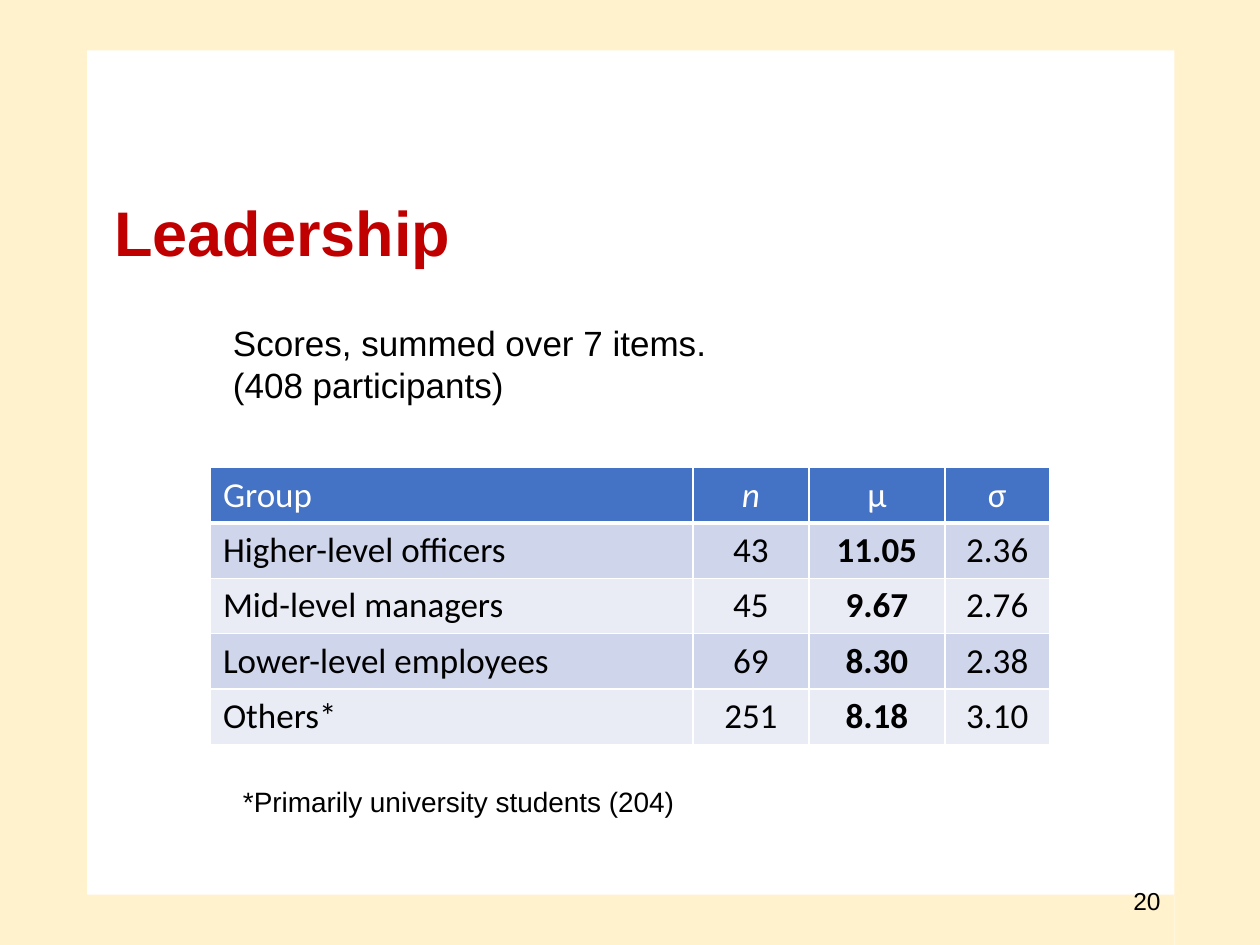
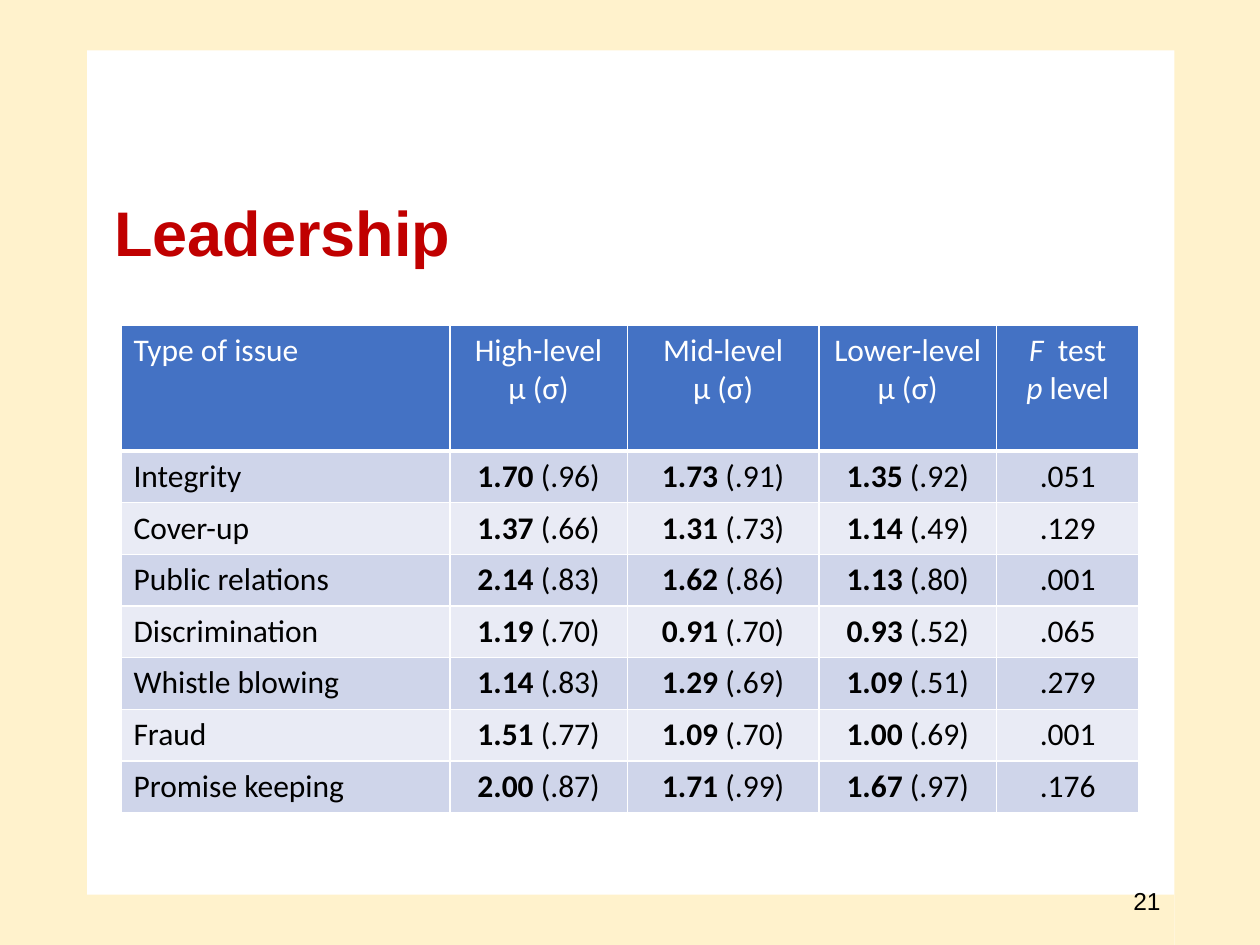
from pptx import Presentation
from pptx.dml.color import RGBColor
from pptx.enum.shapes import MSO_SHAPE as Shape
from pptx.enum.text import MSO_ANCHOR as Anchor, PP_ALIGN as Align
from pptx.oxml import parse_xml
from pptx.oxml.ns import nsdecls
from pptx.util import Inches, Pt

CREAM = RGBColor(0xFF, 0xF2, 0xCC)
RED = RGBColor(0xC0, 0x00, 0x00)
BLACK = RGBColor(0x00, 0x00, 0x00)
WHITE = RGBColor(0xFF, 0xFF, 0xFF)
BLUE = RGBColor(0x44, 0x72, 0xC4)
DARK = RGBColor(0xCF, 0xD5, 0xEA)
LIGHT = RGBColor(0xE9, 0xEB, 0xF5)

BANDS = [
    (0, 0, 0.69, 7.5),
    (9.32, 0, 0.69, 7.5),
    (0.69, 0, 8.67, 0.4),
    (0.65, 7.1, 8.67, 0.4),
]

GROUPS = [
    ["Group", "n|", "μ", "σ"],
    ["Higher-level officers", "43", "11.05|", "2.36"],
    ["Mid-level managers", "45", "9.67|", "2.76"],
    ["Lower-level employees", "69", "8.30|", "2.38"],
    ["Others*", "251", "8.18|", "3.10"],
]

LEVELS = ["High-level", "Mid-level", "Lower-level"]
ISSUES = [
    ("Integrity", "1.70 |(.96)", "1.73 |(.91)", "1.35 |(.92)", ".051"),
    ("Cover-up", "1.37 |(.66)", "1.31 |(.73)", "1.14 |(.49)", ".129"),
    ("Public relations", "2.14 |(.83)", "1.62 |(.86)", "1.13 |(.80)", ".001"),
    ("Discrimination", "1.19 |(.70)", "0.91 |(.70)", "0.93 |(.52)", ".065"),
    ("Whistle blowing", "1.14 |(.83)", "1.29 |(.69)", "1.09 |(.51)", ".279"),
    ("Fraud", "1.51 |(.77)", "1.09 |(.70)", "1.00 |(.69)", ".001"),
    ("Promise keeping", "2.00 |(.87)", "1.71 |(.99)", "1.67 |(.97)", ".176"),
]


class Deck:
    def __init__(self):
        self.prs = Presentation()
        self.prs.slide_width = Inches(10)
        self.prs.slide_height = Inches(7.5)
        self.slide = None

    def start(self, title, number):
        self.slide = self.prs.slides.add_slide(self.prs.slide_layouts[6])
        for box in BANDS:
            self.band(box)
        self.text((7.06, 6.95, 2.25, 0.4), [number], 14,
                  align=Align.RIGHT, anchor=Anchor.MIDDLE)
        head = self.text((0.81, 1.25, 8.5, 1.25), [title], 36, RED,
                         bold=True, anchor=Anchor.MIDDLE)
        head.paragraphs[0].line_spacing = 0.9

    def band(self, box):
        shape = self.slide.shapes.add_shape(Shape.RECTANGLE, *map(Inches, box))
        shape.shadow.inherit = False
        shape.fill.solid()
        shape.fill.fore_color.rgb = CREAM
        shape.line.fill.background()

    def style(self, para, face, size, color, align):
        para.alignment = align
        para.font.name = face
        para.font.size = Pt(size)
        para.font.color.rgb = color

    def text(self, box, lines, size, color=BLACK, bold=False,
             align=Align.LEFT, anchor=Anchor.TOP):
        frame = self.slide.shapes.add_textbox(*map(Inches, box)).text_frame
        frame.word_wrap = True
        frame.vertical_anchor = anchor
        frame.text = "\n".join(lines)
        for para in frame.paragraphs:
            self.style(para, "Arial", size, color, align)
            para.font.bold = bold
        return frame

    def table(self, left, top, widths, heights, rows, size):
        frame = self.slide.shapes.add_table(
            len(rows), len(widths), Inches(left), Inches(top),
            Inches(sum(widths)), Inches(sum(heights)))
        grid = frame.table
        for col, width in zip(grid.columns, widths):
            col.width = Inches(width)
        for row, height in zip(grid.rows, heights):
            row.height = Inches(height)
        for r, row in enumerate(rows):
            fill = BLUE if r == 0 else DARK if r % 2 else LIGHT
            for c, words in enumerate(row):
                cell = grid.cell(r, c)
                self.border(cell, 3 if r == 0 else 1)
                cell.fill.solid()
                cell.fill.fore_color.rgb = fill
                self.fill_cell(cell, words, size, r == 0,
                               Align.CENTER if c else Align.LEFT)

    def border(self, cell, base):
        props = cell._tc.get_or_add_tcPr()
        for side, width in zip("LRTB", (1, 1, 1, base)):
            props.append(parse_xml(
                f'<a:ln{side} {nsdecls("a")} w="{Pt(width)}"><a:solidFill>'
                f'<a:srgbClr val="{WHITE}"/></a:solidFill></a:ln{side}>'))

    def fill_cell(self, cell, words, size, head, align):
        frame = cell.text_frame
        for i, line in enumerate(words.split("\n")):
            para = frame.add_paragraph() if i else frame.paragraphs[0]
            self.style(para, "Calibri", size, WHITE if head else BLACK, align)
            lead, mark, rest = line.partition("|")
            for part, key in ((lead, bool(mark)), (rest, False)):
                if part:
                    run = para.add_run()
                    run.text = part
                    run.font.bold = key and not head
                    run.font.italic = key and head


def main():
    deck = Deck()

    deck.start("Leadership", "20")
    deck.table(1.67, 3.71, [3.83, 0.92, 1.08, 0.83], [0.44] * 5, GROUPS, 20)
    deck.text((1.83, 6.18, 6.33, 0.37),
              ["*Primarily university students (204)"], 16)
    deck.text((1.75, 2.5, 5.92, 0.77),
              ["Scores, summed over 7 items.", "(408 participants)"], 20)

    deck.start("Leadership", "21")
    heads = [f"{level}\nμ (σ)" for level in LEVELS]
    top = ["Type of issue", *heads, "F | test\np| level"]
    deck.table(0.96, 2.58, [2.61, 1.41, 1.52, 1.41, 1.13],
               [1] + [0.41] * 7, [top, *ISSUES], 18)

    deck.prs.save("out.pptx")


if __name__ == "__main__":
    main()
